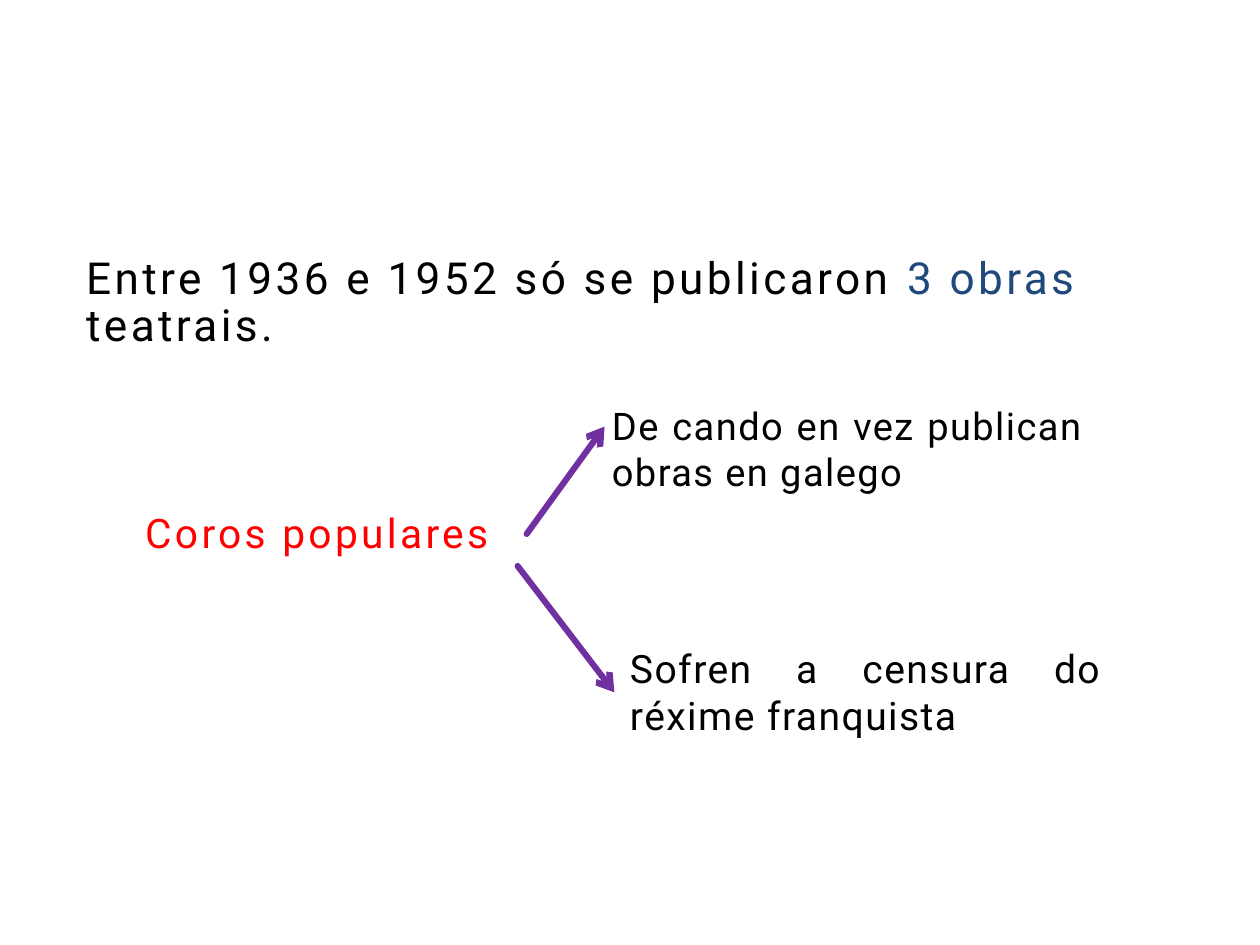
"""Build a slide on Galician theatre publishing and the popular choirs."""
from dataclasses import dataclass

from lxml.etree import SubElement
from pptx import Presentation
from pptx.dml.color import RGBColor as Rgb
from pptx.enum.shapes import MSO_CONNECTOR as Connector
from pptx.enum.text import MSO_AUTO_SIZE as AutoSize, PP_ALIGN as Align
from pptx.oxml.ns import qn
from pptx.util import Pt


@dataclass(frozen=True)
class Theme:
    font: str = "Roboto"
    ink: str = "000000"
    works: str = "1F497D"
    choirs: str = "FF0000"
    arrow: str = "7030A0"
    arrow_width: float = 3.75
    statement_size: float = 26.9
    choirs_size: float = 24.8
    practice_size: float = 23.2
    censorship_size: float = 23.8


THEME = Theme()


def add_text(slide, place, runs, size, leading, tracking, align=Align.LEFT):
    box = slide.shapes.add_textbox(*map(Pt, place))
    frame = box.text_frame
    frame.word_wrap = True
    frame.auto_size = AutoSize.SHAPE_TO_FIT_TEXT
    frame.margin_left = frame.margin_right = Pt(0)
    frame.margin_top = frame.margin_bottom = Pt(0)
    paragraph = frame.paragraphs[0]
    paragraph.alignment = align
    paragraph.line_spacing = Pt(leading)
    for wording, colour in runs:
        run = paragraph.add_run()
        run.text = wording
        run.font.name = THEME.font
        run.font.size = Pt(size)
        run.font.color.rgb = Rgb.from_string(colour)
        run.font._element.set("spc", str(round(tracking * 100)))


def add_arrow(slide, start, end):
    arrow = slide.shapes.add_connector(
        Connector.STRAIGHT, *map(Pt, (*start, *end)))
    arrow.line.color.rgb = Rgb.from_string(THEME.arrow)
    arrow.line.width = Pt(THEME.arrow_width)
    properties = arrow._element.spPr
    outline = properties.find(qn("a:ln"))
    outline.set("cap", "rnd")
    SubElement(outline, qn("a:tailEnd"), type="arrow")
    SubElement(properties, qn("a:effectLst"))


def main():
    deck = Presentation()
    deck.slide_width, deck.slide_height = Pt(768), Pt(576)
    slide = deck.slides.add_slide(deck.slide_layouts[6])

    add_text(slide, (88.5, 309.5, 258.5, 58.5),
             [("Coros populares", THEME.choirs)],
             THEME.choirs_size, 29.8, 2)
    add_text(slide, (52.5, 155.5, 699, 57),
             [("Entre 1936 e 1952 só se publicaron ", THEME.ink),
              ("3 obras ", THEME.works),
              ("teatrais.", THEME.ink)],
             THEME.statement_size, 29.1, 2.1)

    consequences = [
        ((373, 245.5, 287.5, 83), "De cando en vez publican obras en galego",
         THEME.practice_size, 27.9),
        ((384, 393, 287.5, 85.5), "Sofren a censura do réxime franquista",
         THEME.censorship_size, 28.6),
    ]
    for place, wording, size, leading in consequences:
        add_text(slide, place, [(wording, THEME.ink)],
                 size, leading, 0.9, Align.JUSTIFY)

    add_arrow(slide, (321, 325.5), (368.5, 260))
    add_arrow(slide, (315.5, 345), (374.5, 422))

    deck.save("out.pptx")


if __name__ == "__main__":
    main()
